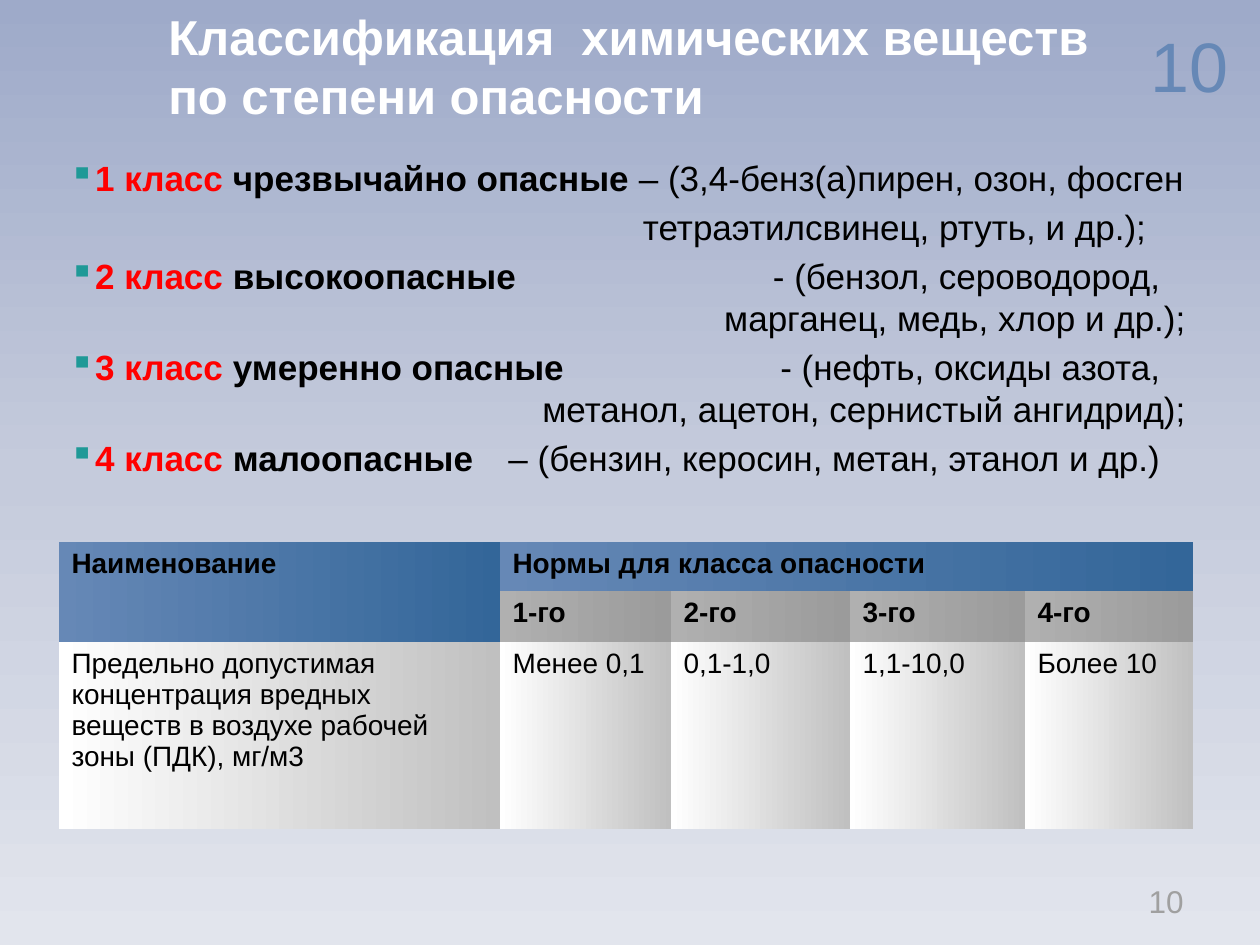
from copy import deepcopy
from typing import NamedTuple

from lxml import etree
from pptx import Presentation
from pptx.dml.color import RGBColor
from pptx.enum import text as t
from pptx.oxml.ns import qn
from pptx.util import Emu, Pt

SCALE = 914400 / 126
FONT = "Arial"
WHITE = RGBColor(0xFF, 0xFF, 0xFF)
BLACK = RGBColor(0, 0, 0)
RED = RGBColor(0xFF, 0, 0)
TEAL = RGBColor(0x1F, 0x99, 0x97)
BLUE = RGBColor(0x66, 0x88, 0xB6)
NAVY = RGBColor(0x33, 0x66, 0x99)
GREY = RGBColor(0xA0, 0xA0, 0xA0)
SKY = [RGBColor(0x9E, 0xAA, 0xC9), RGBColor(0xC5, 0xCB, 0xDC), RGBColor(0xE2, 0xE5, 0xED)]
HEAD = (BLUE, NAVY)
SUB = (RGBColor(0xB0, 0xB0, 0xB0), RGBColor(0x9B, 0x9B, 0x9B))
DATA = (WHITE, RGBColor(0xC0, 0xC0, 0xC0))
NO_STYLE = "{2D5ABB26-0587-4C30-8999-92F81FD0307C}"
EDGE = 1117    # right tab stop of the class list
HANG = 574     # indent of the carried-over line of class 1


class Label(NamedTuple):
    text: str
    box: tuple[int, int, int, int]
    size: int
    color: RGBColor
    bold: bool = False
    align: t.PP_ALIGN = t.PP_ALIGN.RIGHT
    anchor: t.MSO_ANCHOR = t.MSO_ANCHOR.MIDDLE


class Hazard(NamedTuple):
    rank: str
    name: str
    lines: list[str]


class Cell(NamedTuple):
    row: int
    col: int
    text: str
    fill: tuple[RGBColor, RGBColor]
    bold: bool = True


LABELS = [
    Label("10", (948, 16, 293, 100), 40, BLUE, anchor=t.MSO_ANCHOR.TOP),
    Label("Классификация  химических веществ по степени опасности",
          (156, 0, 960, 130), 28, WHITE, True, t.PP_ALIGN.LEFT),
    Label("10", (903, 876, 293, 50), 18, GREY),
]
HAZARDS = [
    Hazard("1 класс ", "чрезвычайно опасные ", ["– (3,4-бенз(а)пирен, озон, фосген"]),
    Hazard("2 класс ", "высокоопасные",
           ["\t- (бензол, сероводород,", "\tмарганец, медь, хлор и др.);"]),
    Hazard("3 класс ", "умеренно опасные",
           ["\t- (нефть, оксиды азота,", "\tметанол, ацетон, сернистый ангидрид);"]),
    Hazard("4 класс ", "малоопасные", ["\t– (бензин, керосин, метан, этанол и др.)"]),
]
CARRY = "тетраэтилсвинец, ртуть, и др.);"
COLS = [441, 171, 179, 175, 168]
ROWS = [49, 51, 187]
LIMITS = ["Предельно допустимая концентрация вредных веществ в воздухе рабочей зоны (ПДК), мг/м3",
          "Менее 0,1", "0,1-1,0", "1,1-10,0", "Более 10"]
CELLS = [
    Cell(0, 0, "Наименование", HEAD),
    Cell(0, 1, "Нормы для класса опасности", HEAD),
    *(Cell(1, n, f"{n}-го", SUB) for n in range(1, 5)),
    *(Cell(2, n, limit, DATA, False) for n, limit in enumerate(LIMITS)),
]


def px(n: int) -> Emu:
    return Emu(round(n * SCALE))


def style(obj, **values) -> None:
    for key, value in values.items():
        setattr(obj, key, value)


def write(para, words: str, size: int, color: RGBColor, bold: bool = False) -> None:
    run = para.add_run()
    run.text = words
    style(run.font, name=FONT, size=Pt(size), bold=bold)
    run.font.color.rgb = color


def frame(slide, box: tuple[int, int, int, int]):
    body = slide.shapes.add_textbox(*map(px, box)).text_frame
    body.word_wrap = True
    return body


def shade(fill, colors, angle: int) -> None:
    fill.gradient()
    fill.gradient_angle = angle
    for stop, color in zip(fill.gradient_stops, colors):
        stop.color.rgb = color


def sky(slide) -> None:
    """Fill the background with three stops from top to bottom."""
    fill = slide.background.fill
    shade(fill, SKY[::2], 270)
    first = slide.element.find(".//" + qn("a:gs"))
    first.addnext(deepcopy(first))
    mid = fill.gradient_stops[1]
    mid.position = 0.5
    mid.color.rgb = SKY[1]


def label(slide, item: Label) -> None:
    body = frame(slide, item.box)
    body.vertical_anchor = item.anchor
    para = body.paragraphs[0]
    para.alignment = item.align
    write(para, item.text, item.size, item.color, item.bold)


def bullet(para) -> None:
    """Add the teal square and the right tab stop."""
    props = para._p.get_or_add_pPr()
    tint = etree.SubElement(props, qn("a:buClr"))
    etree.SubElement(tint, qn("a:srgbClr"), val=str(TEAL))
    etree.SubElement(props, qn("a:buChar"), char="▪")
    tabs = etree.SubElement(props, qn("a:tabLst"))
    etree.SubElement(tabs, qn("a:tab"), pos=str(px(EDGE)), algn="r")


def classes(slide) -> None:
    body = frame(slide, (44, 150, 1155, 362))
    body.margin_left = px(25)
    para = body.paragraphs[0]
    for n, item in enumerate(HAZARDS):
        if n:
            para = body.add_paragraph()
        para.space_before = Pt(4)
        bullet(para)
        write(para, item.rank, 20, RED, True)
        write(para, item.name, 20, BLACK, True)
        for k, line in enumerate(item.lines):
            if k:
                para.add_line_break()
            write(para, line, 20, BLACK)
        if n == 0:
            para = body.add_paragraph()
            para.space_before = Pt(4)
            para._p.get_or_add_pPr().set("marL", str(px(HANG)))
            write(para, CARRY, 20, BLACK)


def norms(slide) -> None:
    box = (59, 542, sum(COLS), sum(ROWS))
    shape = slide.shapes.add_table(len(ROWS), len(COLS), *map(px, box))
    table = shape.table
    style(table, first_row=False, horz_banding=False)
    shape.element.find(".//" + qn("a:tableStyleId")).text = NO_STYLE
    for col, width in zip(table.columns, COLS):
        col.width = px(width)
    for row, height in zip(table.rows, ROWS):
        row.height = px(height)
    table.cell(0, 0).merge(table.cell(1, 0))
    table.cell(0, 1).merge(table.cell(0, 4))
    for item in CELLS:
        cell = table.cell(item.row, item.col)
        shade(cell.fill, item.fill, 0)
        para = cell.text_frame.paragraphs[0]
        para.space_before = Pt(3.2)
        write(para, item.text, 16, BLACK, item.bold)


def main() -> None:
    deck = Presentation()
    style(deck, slide_width=px(1260), slide_height=px(945))
    slide = deck.slides.add_slide(deck.slide_layouts[6])
    sky(slide)
    for item in LABELS[:2]:
        label(slide, item)
    classes(slide)
    norms(slide)
    label(slide, LABELS[2])
    deck.save("out.pptx")


if __name__ == "__main__":
    main()
